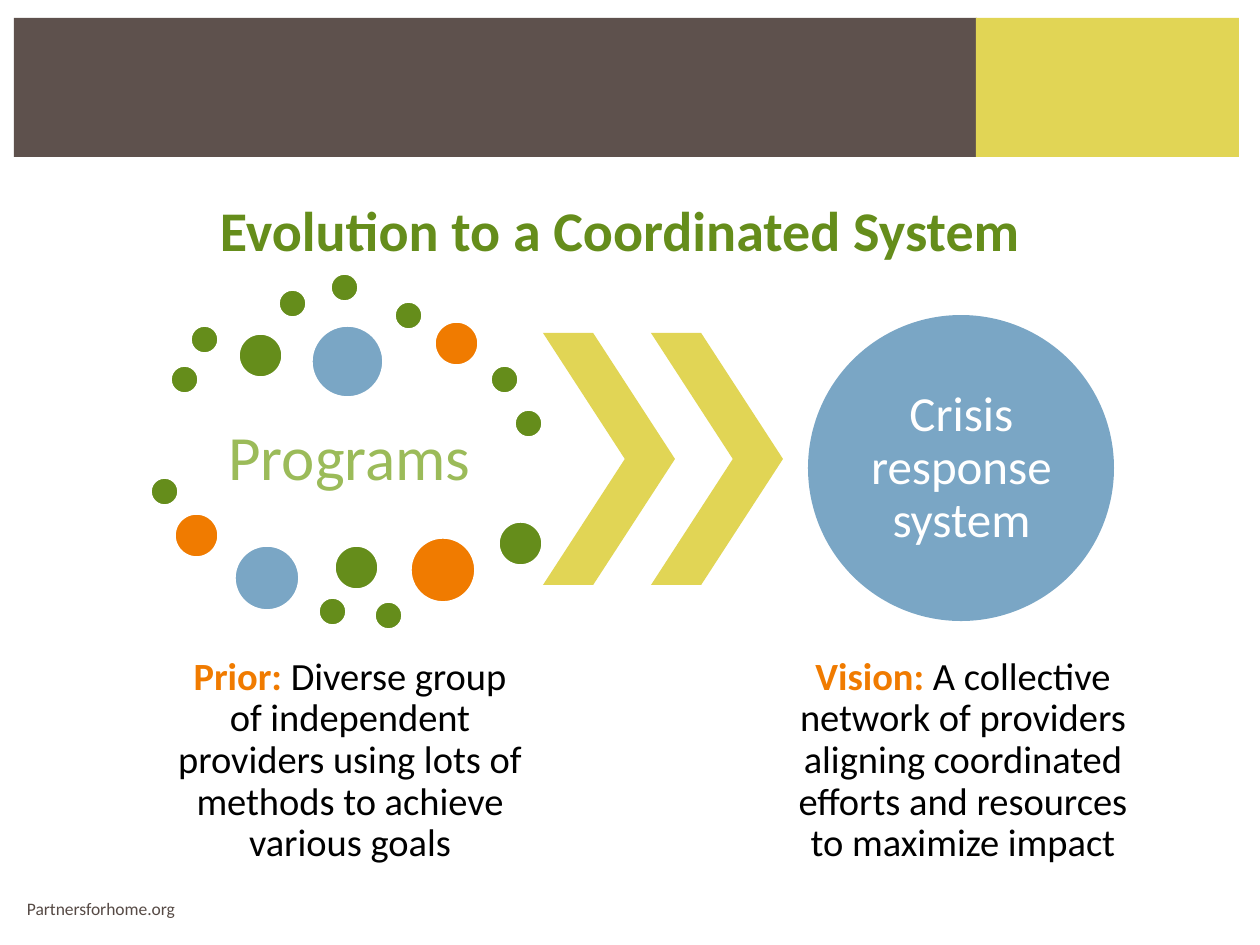
import dataclasses

import pptx
import pptx.dml.color
import pptx.enum.shapes
import pptx.enum.text
import pptx.util

SHAPE = pptx.enum.shapes.MSO_SHAPE
ALIGN = pptx.enum.text.PP_ALIGN
ANCHOR = pptx.enum.text.MSO_ANCHOR


@dataclasses.dataclass(frozen=True)
class Theme:
    font: str = "Calibri"
    brown: str = "5E514D"
    footer_brown: str = "564A45"
    yellow: str = "E1D555"
    green: str = "658D1B"
    light_green: str = "9BBB59"
    orange: str = "F07B00"
    blue: str = "7AA6C5"
    white: str = "FFFFFF"
    black: str = "000000"
    title_size: int = 32
    programs_size: int = 36
    system_size: int = 28
    body_size: int = 22
    footer_size: int = 10
    dot_outline: int = 2


class SlideBuilder:
    PX = 914400 / 126

    def __init__(self, deck, theme):
        self.theme = theme
        self.slide = deck.slides.add_slide(deck.slide_layouts[6])

    def emu(self, *lengths):
        return [round(length * self.PX) for length in lengths]

    def color(self, value):
        return pptx.dml.color.RGBColor.from_string(value)

    def shape(self, kind, box, fill, outline=None):
        shape = self.slide.shapes.add_shape(kind, *self.emu(*box))
        shape.shadow.inherit = False
        shape.fill.solid()
        shape.fill.fore_color.rgb = self.color(fill)
        if outline:
            shape.line.color.rgb = self.color(outline)
            shape.line.width = pptx.util.Pt(self.theme.dot_outline)
        else:
            shape.line.fill.background()
        return shape

    def chevron(self, box, point):
        chevron = self.shape(SHAPE.CHEVRON, box, self.theme.yellow)
        chevron.adjustments[0] = point

    def dot(self, left, top, size, fill):
        self.shape(SHAPE.OVAL, (left, top, size, size), fill, self.theme.white)

    def text(self, box, runs, size, align=ALIGN.CENTER, anchor=ANCHOR.MIDDLE,
             insets=(4, 4), line_spacing=0.9):
        frame = self.slide.shapes.add_textbox(*self.emu(*box)).text_frame
        frame.word_wrap = True
        frame.vertical_anchor = anchor
        side, end = self.emu(*insets)
        frame.margin_left = frame.margin_right = side
        frame.margin_top = frame.margin_bottom = end
        paragraph = frame.paragraphs[0]
        paragraph.alignment = align
        paragraph.line_spacing = line_spacing
        for wording, color, bold in runs:
            run = paragraph.add_run()
            run.text = wording
            run.font.name = self.theme.font
            run.font.size = pptx.util.Pt(size)
            run.font.bold = bold
            run.font.color.rgb = self.color(color)


def main():
    theme = Theme()
    deck = pptx.Presentation()
    deck.slide_width = pptx.util.Inches(10)
    deck.slide_height = pptx.util.Inches(7.5)
    page = SlideBuilder(deck, theme)

    page.shape(SHAPE.RECTANGLE, (14, 18, 963, 139), theme.brown)
    page.shape(SHAPE.RECTANGLE, (976, 18, 263, 139), theme.yellow)
    page.text((14, 892, 179, 34),
              [("Partnersforhome.org", theme.footer_brown, False)],
              theme.footer_size, ALIGN.LEFT, ANCHOR.TOP, (13, 6), 1.0)
    page.text((53, 189, 1134, 95),
              [("Evolution to a Coordinated System", theme.green, True)],
              theme.title_size, anchor=ANCHOR.TOP, insets=(13, 6),
              line_spacing=1.0)

    page.text((170, 401, 359, 118),
              [("Programs", theme.light_green, False)],
              theme.programs_size, insets=(6, 6))

    program_dots = [
        (29, theme.green, [(170, 365), (190, 325), (278, 289), (330, 273),
                           (394, 301), (490, 365), (514, 409), (150, 477),
                           (318, 597), (374, 601)]),
        (45, theme.green, [(238, 333), (334, 545), (498, 521)]),
        (45, theme.orange, [(434, 321), (174, 513)]),
        (66, theme.blue, [(234, 545)]),
        (66, theme.orange, [(410, 537)]),
        (73, theme.blue, [(311, 325)]),
    ]
    for size, fill, places in program_dots:
        for left, top in places:
            page.dot(left, top, size, fill)

    for step in range(2):
        page.chevron((543 + 108 * step, 333, 132, 252), 0.62)

    page.shape(SHAPE.OVAL, (808, 315, 306, 306), theme.blue)
    page.text((853, 360, 217, 217),
              [("Crisis response system", theme.white, False)],
              theme.system_size, insets=(0, 0))

    stages = [
        (170, "Prior: ", "Diverse group of independent providers using lots "
                         "of methods to achieve various goals"),
        (783, "Vision: ", "A collective network of providers aligning "
                          "coordinated efforts and resources to maximize "
                          "impact"),
    ]
    for left, stage, description in stages:
        page.text((left, 650, 360, 222),
                  [(stage, theme.orange, True),
                   (description, theme.black, False)],
                  theme.body_size)

    deck.save("out.pptx")


if __name__ == "__main__":
    main()
